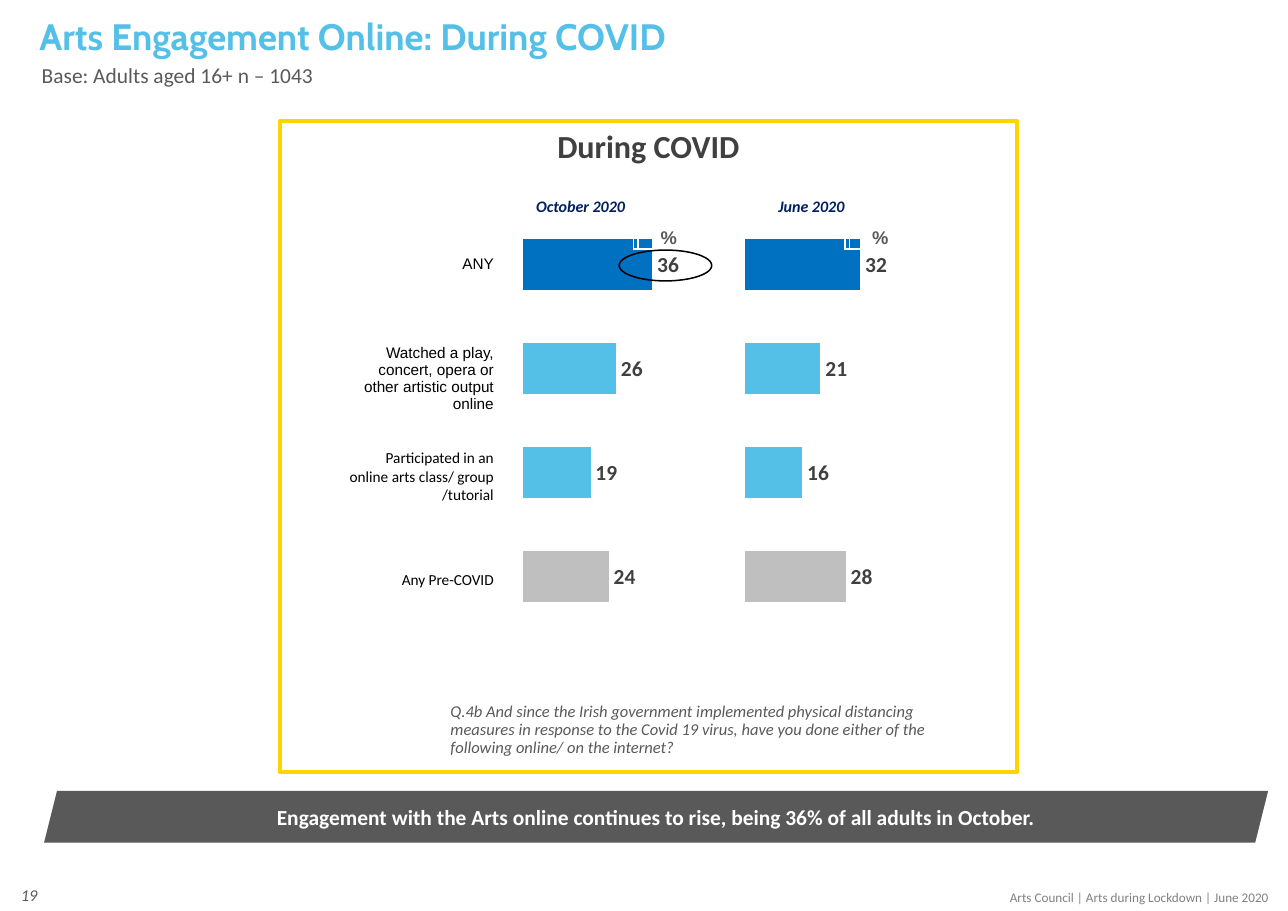
from dataclasses import dataclass

from lxml import etree
from pptx import Presentation
from pptx import util as u
from pptx.chart.data import CategoryChartData
from pptx.dml.color import RGBColor
from pptx.enum import chart as charts, shapes, text

ALIGN = text.PP_ALIGN
ANCHOR = text.MSO_ANCHOR
TEXT_MARGINS = (0.1, 0.05, 0.1, 0.05)
NO_MARGINS = (0, 0, 0, 0)


@dataclass(frozen=True)
class Theme:
    sky: str = "54C0E8"
    blue: str = "0070C0"
    navy: str = "002060"
    silver: str = "BFBFBF"
    gray: str = "808080"
    slate: str = "595959"
    charcoal: str = "404040"
    yellow: str = "FED402"
    black: str = "000000"
    white: str = "FFFFFF"
    body_font: str = "Calibri"
    title_font: str = "Cabin"
    label_font: str = "Arial"
    title: float = 24
    heading: float = 21
    large: float = 14
    percent: float = 12
    note: float = 10.8
    wave: float = 10.5
    label: float = 10
    footer: float = 8.6


class SlideBuilder:
    def __init__(self, page, theme):
        self.page = page
        self.theme = theme

    def style_font(self, font, size, color, name=None, bold=False, italic=False):
        font.name = name or self.theme.body_font
        font.size = u.Pt(size)
        font.bold = bold
        font.italic = italic
        font.color.rgb = RGBColor.from_string(color)

    def set_words(self, frame, words, align=ALIGN.LEFT, spacing=None, **style):
        para = frame.paragraphs[0]
        para.text = words
        para.alignment = align
        if spacing:
            para.line_spacing = spacing
        self.style_font(para.font, **style)

    def set_frame(self, frame, anchor, margins):
        frame.word_wrap = True
        frame.vertical_anchor = anchor
        (frame.margin_left, frame.margin_top,
         frame.margin_right, frame.margin_bottom) = map(u.Inches, margins)

    def text(self, words, place, anchor=ANCHOR.TOP, margins=TEXT_MARGINS, **style):
        box = self.page.shapes.add_textbox(*map(u.Inches, place))
        self.set_frame(box.text_frame, anchor, margins)
        self.set_words(box.text_frame, words, **style)

    def shape(self, kind, place, fill=None, line=None, width=1):
        shape = self.page.shapes.add_shape(kind, *map(u.Inches, place))
        shape.shadow.inherit = False
        if fill:
            shape.fill.solid()
            shape.fill.fore_color.rgb = RGBColor.from_string(fill)
        else:
            shape.fill.background()
        if line:
            shape.line.color.rgb = RGBColor.from_string(line)
            shape.line.width = u.Pt(width)
        else:
            shape.line.fill.background()
        return shape

    def captioned(self, kind, place, words, style, anchor=ANCHOR.TOP,
                  margins=TEXT_MARGINS, **look):
        shape = self.shape(kind, place, **look)
        self.set_frame(shape.text_frame, anchor, margins)
        self.set_words(shape.text_frame, words, align=ALIGN.CENTER, **style)

    def table(self, left, top, widths, heights, rows, styles, align, anchor, margins):
        table = self.page.shapes.add_table(
            len(heights), len(widths), u.Inches(left), u.Inches(top),
            u.Inches(sum(widths)), u.Inches(sum(heights))).table
        table.first_row = table.horz_banding = False
        for column, width in zip(table.columns, widths):
            column.width = u.Inches(width)
        for row, height, words, style in zip(table.rows, heights, rows, styles):
            row.height = u.Inches(height)
            for cell, word in zip(row.cells, words):
                cell.fill.background()
                cell.vertical_anchor = anchor
                (cell.margin_left, cell.margin_top,
                 cell.margin_right, cell.margin_bottom) = map(u.Inches, margins)
                self.set_words(cell.text_frame, word, align=align, **style)

    def bars(self, place, values, highlights):
        theme = self.theme
        data = CategoryChartData(number_format="0")
        data.categories = ["1", "2", "3", "4"]
        data.add_series("Series 1", values)
        chart = self.page.shapes.add_chart(
            charts.XL_CHART_TYPE.BAR_CLUSTERED, *map(u.Inches, place), data).chart
        chart.has_legend = chart.has_title = False
        self.style_font(chart.font, theme.label, theme.black)
        chart.category_axis.visible = False
        chart.category_axis.reverse_order = True
        axis = chart.value_axis
        axis.visible = axis.has_major_gridlines = False
        axis.minimum_scale, axis.maximum_scale = 0, 40
        plot = chart.plots[0]
        plot.gap_width = 100
        plot.vary_by_categories = False
        series = plot.series[0]
        self.paint_bar(series.format, theme.sky)
        for index, color in highlights.items():
            self.paint_bar(series.points[index].format, color)
        labels = series.data_labels
        labels.show_value = True
        labels.position = charts.XL_LABEL_POSITION.OUTSIDE_END
        labels.number_format, labels.number_format_is_linked = "0", False
        self.style_font(labels.font, theme.large, theme.charcoal, bold=True)
        self.place_plot(chart, x=0.49, y=0.05, w=0.46, h=0.94)

    def paint_bar(self, look, color):
        look.fill.solid()
        look.fill.fore_color.rgb = RGBColor.from_string(color)
        look.line.color.rgb = RGBColor.from_string(self.theme.white)
        look.line.width = u.Pt(0.75)

    def place_plot(self, chart, **sizes):
        area = chart.plots[0]._element.getparent()
        space = "{%s}" % area.nsmap["c"]
        for old in area.findall(space + "layout"):
            area.remove(old)
        layout = etree.Element(space + "layout")
        manual = etree.SubElement(layout, space + "manualLayout")
        settings = {"layoutTarget": "inner", "xMode": "edge", "yMode": "edge", **sizes}
        for name, value in settings.items():
            etree.SubElement(manual, space + name, val=str(value))
        area.insert(0, layout)


def main():
    deck = Presentation()
    deck.slide_width, deck.slide_height = u.Inches(11.69), u.Inches(8.27)
    theme = Theme()
    slide = SlideBuilder(deck.slides.add_slide(deck.slide_layouts[6]), theme)

    slide.text("Arts Council | Arts during Lockdown | June 2020", (7.71, 8.02, 3.91, 0.25),
               align=ALIGN.RIGHT, size=theme.footer, color=theme.gray)
    slide.text("19", (-0.06, 7.9, 0.51, 0.44), anchor=ANCHOR.MIDDLE, align=ALIGN.RIGHT,
               margins=(0.11, 0.05, 0.11, 0.05), size=theme.note, color=theme.slate, italic=True)
    slide.text("Base: Adults aged 16+ n – 1043", (0.28, 0.54, 6.55, 0.39),
               spacing=0.9, size=theme.large, color=theme.slate)
    slide.text("Arts Engagement Online: During COVID", (0.26, 0.12, 9.38, 0.45), spacing=0.9,
               size=theme.title, color=theme.sky, name=theme.title_font, bold=True)
    slide.text("Q.4b And since the Irish government implemented physical distancing measures in "
               "response to the Covid 19 virus, have you done either of the following online/ "
               "on the internet?", (3.99, 6.58, 4.95, 0.34), anchor=ANCHOR.BOTTOM,
               spacing=0.9, size=theme.note, color=theme.slate, italic=True)

    slide.captioned(shapes.MSO_SHAPE.RECTANGLE, (2.54, 1.1, 6.69, 5.91), "During COVID",
                    dict(size=theme.heading, color=theme.charcoal, bold=True),
                    line=theme.yellow, width=3)
    slide.captioned(shapes.MSO_SHAPE.PARALLELOGRAM, (0.4, 7.18, 11.11, 0.47),
                    "Engagement with the Arts online continues to rise, "
                    "being 36% of all adults in October.",
                    dict(size=theme.large, color=theme.white, bold=True),
                    anchor=ANCHOR.MIDDLE, margins=NO_MARGINS, fill=theme.slate)

    percent = dict(size=theme.percent, color=theme.slate, name=theme.label_font, bold=True)
    waves = [
        ("October 2020", (36, 26, 19, 24), 3.34, 5.75, (4.72, 1.73, 1.1, 0.29)),
        ("June 2020", (32, 21, 16, 28), 5.36, 7.67, (6.95, 1.73, 0.83, 0.28)),
    ]
    for name, values, chart_left, percent_left, name_place in waves:
        slide.bars((chart_left, 1.73, 2.86, 4.02), values, {0: theme.blue, 3: theme.silver})
        slide.table(percent_left, 2.06, (0.03, 0.56), (0.2,), [("", "%")], [percent],
                    ALIGN.CENTER, ANCHOR.MIDDLE, NO_MARGINS)
        slide.text(name, name_place, align=ALIGN.CENTER, size=theme.wave,
                   color=theme.navy, bold=True, italic=True)

    activities = [
        ("ANY", 0.81, theme.label_font),
        ("Watched a play, concert, opera or other artistic output online", 0.95, theme.label_font),
        ("Participated in an online arts class/ group /tutorial", 1.1, theme.body_font),
        ("Any Pre-COVID", 0.31, theme.body_font),
    ]
    names, heights, fonts = zip(*activities)
    slide.table(3.14, 2.31, (1.35,), heights, [(name,) for name in names],
                [dict(size=theme.label, color=theme.black, name=font) for font in fonts],
                ALIGN.RIGHT, ANCHOR.TOP, (0.01, 0.01, 0.01, 0))
    slide.shape(shapes.MSO_SHAPE.OVAL, (5.62, 2.27, 0.84, 0.28), line=theme.black)

    deck.save("out.pptx")


if __name__ == "__main__":
    main()
